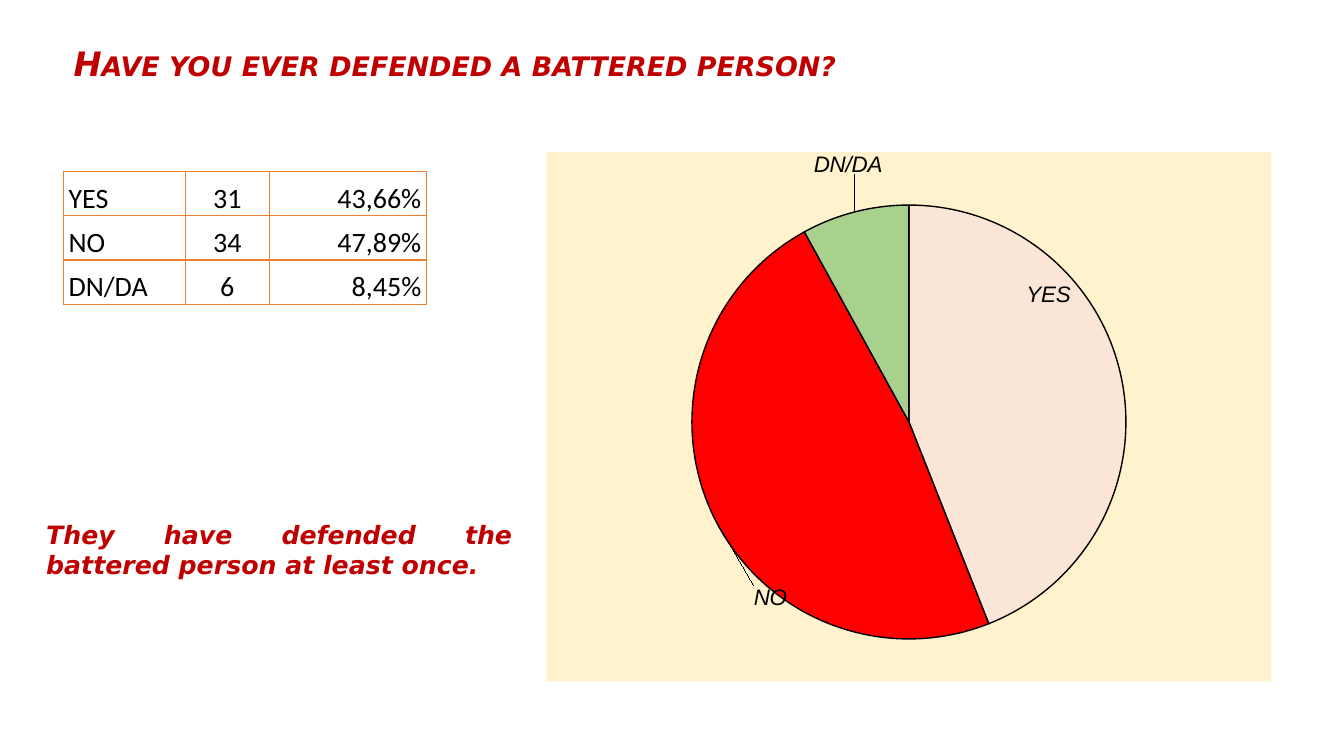
from lxml.etree import SubElement
from pptx import Presentation
from pptx.chart.data import CategoryChartData
from pptx.dml.color import RGBColor
from pptx.enum.chart import XL_CHART_TYPE as CT, XL_LABEL_POSITION as LP
from pptx.enum.text import MSO_ANCHOR as MA, PP_ALIGN as AL
from pptx.oxml import parse_xml
from pptx.oxml.ns import nsdecls, qn
from pptx.util import Pt

PX = 9144
NO_STYLE = "{2D5ABB26-0587-4C30-8999-92F81FD0307C}"
CRIMSON = RGBColor(0xC0, 0x00, 0x00)
BLACK = RGBColor(0x00, 0x00, 0x00)
ORANGE = RGBColor(0xED, 0x7D, 0x31)
CREAM = RGBColor(0xFF, 0xF2, 0xCC)
PINK = RGBColor(0xFB, 0xE5, 0xD6)
RED = RGBColor(0xFF, 0x00, 0x00)
GREEN = RGBColor(0xA9, 0xD1, 0x8E)


def write(tf, text, *, font, size, color, bold=False, italic=False,
          align=AL.LEFT, anchor=MA.TOP, spacing=1.0, small_caps=False):
    tf.word_wrap = True
    tf.vertical_anchor = anchor
    p = tf.paragraphs[0]
    p.alignment, p.line_spacing, p.space_before = align, spacing, Pt(0)
    r = p.add_run()
    r.text = text
    f = r.font
    f.name, f.size, f.bold, f.italic = font, Pt(size), bold, italic
    f.color.rgb = color
    if small_caps:
        f._element.set("cap", "small")


def manual_layout(x, y, w=None, h=None):
    inner = '<c:layoutTarget val="inner"/>' if w else ""
    modes = '<c:xMode val="edge"/><c:yMode val="edge"/>' if w else ""
    size = f'<c:w val="{w}"/><c:h val="{h}"/>' if w else ""
    return parse_xml(
        f'<c:layout {nsdecls("c")}><c:manualLayout>{inner}{modes}'
        f'<c:x val="{x}"/><c:y val="{y}"/>{size}</c:manualLayout></c:layout>')


class SurveySlide:
    """Draws survey elements on one slide in a shared style."""

    heading = dict(font="DejaVu Sans", color=CRIMSON, bold=True, italic=True)
    cell_text = dict(font="Calibri", size=20, color=BLACK, anchor=MA.BOTTOM)

    def __init__(self, prs):
        self.s = prs.slides.add_slide(prs.slide_layouts[5])

    def box(self, *px):
        return [v * PX for v in px]

    def title(self, text, *at):
        sp = self.s.shapes.title
        sp.left, sp.top, sp.width, sp.height = self.box(*at)
        write(sp.text_frame, text, size=24, spacing=0.9, small_caps=True,
              **self.heading)

    def note(self, text, *at):
        sp = self.s.shapes.add_textbox(*self.box(*at))
        write(sp.text_frame, text, size=18, align=AL.JUSTIFY, **self.heading)

    def table(self, rows, widths, aligns, *at):
        frame = self.s.shapes.add_table(len(rows), len(widths), *self.box(*at))
        tbl = frame.table
        tbl.first_row = tbl.horz_banding = False
        tbl._tbl.tblPr.find(qn("a:tableStyleId")).text = NO_STYLE
        for col, width in zip(tbl.columns, widths):
            col.width = width * PX
        for i, row in enumerate(rows):
            for j, text in enumerate(row):
                self.cell(tbl.cell(i, j), text, aligns[j])

    def cell(self, cell, text, align):
        cell.margin_left = cell.margin_right = 5 * PX
        cell.margin_top = cell.margin_bottom = 0
        write(cell.text_frame, text, align=align, **self.cell_text)
        cell.vertical_anchor = MA.BOTTOM
        tc_pr = cell._tc.get_or_add_tcPr()
        for side in ("lnL", "lnR", "lnT", "lnB"):
            ln = SubElement(tc_pr, qn(f"a:{side}"), w=str(Pt(1)))
            fill = SubElement(ln, qn("a:solidFill"))
            SubElement(fill, qn("a:srgbClr"), val=str(ORANGE))
        cell.fill.background()

    def pie(self, slices, plot_at, *at):
        data = CategoryChartData()
        data.categories = [name for name, *_ in slices]
        data.add_series("Series 1", [value for _, value, *_ in slices])
        chart = self.s.shapes.add_chart(CT.PIE, *self.box(*at), data).chart
        chart.has_legend = chart.has_title = False
        f = chart.font
        f.name, f.size, f.color.rgb = "Arial", Pt(10), BLACK
        root = chart._chartSpace
        root.find(qn("c:chart")).addnext(parse_xml(
            f'<c:spPr {nsdecls("c", "a")}><a:solidFill><a:srgbClr val="{CREAM}"/>'
            '</a:solidFill><a:ln><a:noFill/></a:ln></c:spPr>'))
        area = root.find(".//" + qn("c:plotArea"))
        for layout in area.findall(qn("c:layout")):
            area.remove(layout)
        area.insert(0, manual_layout(*plot_at))

        plot = chart.plots[0]
        plot.vary_by_categories = True
        series = plot.series[0]
        labels = series.data_labels
        labels.show_value, labels.show_category_name = False, True
        labels.position = LP.OUTSIDE_END
        self.label_font(labels.font)
        for i, (_, _, color, _) in enumerate(slices):
            point = series.points[i]
            point.format.fill.solid()
            point.format.fill.fore_color.rgb = color
            point.format.line.color.rgb = BLACK
            point.format.line.width = Pt(1)
            point.data_label.position = LP.OUTSIDE_END
            self.label_font(point.data_label.font)
        for label, (*_, shift) in zip(root.iter(qn("c:dLbl")), slices):
            label.find(qn("c:idx")).addnext(manual_layout(*shift))
            label.find(qn("c:showVal")).set("val", "0")
            label.find(qn("c:showCatName")).set("val", "1")

    def label_font(self, f):
        f.name, f.size, f.italic, f.bold = "Arial", Pt(16), True, False
        f.color.rgb = BLACK


def main():
    prs = Presentation()
    prs.slide_width, prs.slide_height = 1333 * PX, 750 * PX
    slide = SurveySlide(prs)
    slide.title("Have you ever defended a battered person?", 63, 42, 1188, 68)
    slide.table([("YES", "31", "43,66%"),
                 ("NO", "34", "47,89%"),
                 ("DN/DA", "6", "8,45%")],
                (121, 83, 156), (AL.LEFT, AL.CENTER, AL.RIGHT),
                63, 170, 360, 132)
    slide.pie([("YES", 44, PINK, (-0.14, -0.14)),
               ("NO", 48, RED, (0.11, 0.13)),
               ("DN/DA", 8, GREEN, (0.04, -0.06))],
              (0.05, 0.1, 0.9, 0.82), 542, 151, 719, 525)
    slide.note("They have defended the battered person at least once.",
               36, 510, 482, 71)
    prs.save("out.pptx")


if __name__ == "__main__":
    main()
